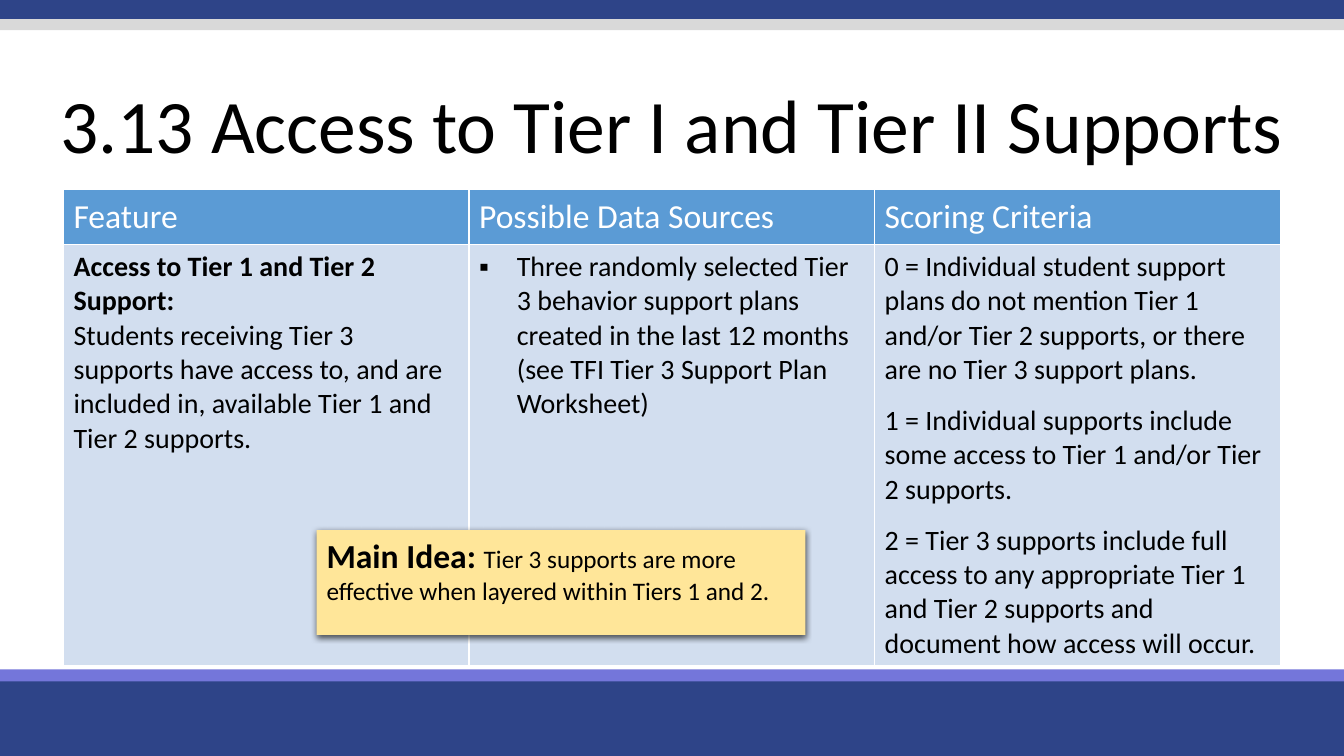
from dataclasses import dataclass

from lxml import etree
from pptx import Presentation
from pptx import util as u
from pptx.dml.color import RGBColor
from pptx.enum import shapes, text
from pptx.oxml import ns

Cm, Pt = u.Cm, u.Pt
WIDTH, HEIGHT = 33.87, 19.05


@dataclass(frozen=True)
class Theme:
    font: str = "Calibri"
    navy: str = "2E4488"
    violet: str = "7476DA"
    grey: str = "D9D9D9"
    header: str = "5B9BD5"
    body: str = "D2DEEF"
    note: str = "FFE699"
    black: str = "000000"
    white: str = "FFFFFF"
    title_size: int = 54
    head_size: int = 24
    body_size: int = 20
    note_size: int = 18


T = Theme()

HEADINGS = ["Feature", "Possible Data Sources", "Scoring Criteria"]
FEATURE = [
    "Access to Tier 1 and Tier 2 Support:",
    "Students receiving Tier 3 supports have access to, and are included in, "
    "available Tier 1 and Tier 2 supports.",
]
SOURCES = [
    "Three randomly selected Tier 3 behavior support plans created in the last "
    "12 months (see TFI Tier 3 Support Plan Worksheet)",
]
CRITERIA = [
    "0 = Individual student support plans do not mention Tier 1 and/or Tier 2 "
    "supports, or there are no Tier 3 support plans.",
    "1 = Individual supports include some access to Tier 1 and/or Tier 2 supports.",
    "2 = Tier 3 supports include full access to any appropriate Tier 1 and Tier 2 "
    "supports and document how access will occur.",
]


def sub(parent, tag, **attrs):
    return etree.SubElement(parent, ns.qn(tag), attrs)


def style(r, size, color=T.black, bold=False):
    r.font.name, r.font.size, r.font.bold = T.font, Pt(size), bold
    r.font.color.rgb = RGBColor.from_string(color)


def add_rect(s, box, color):
    sp = s.shapes.add_shape(shapes.MSO_SHAPE.RECTANGLE, *map(Cm, box))
    sp.shadow.inherit = False
    sp.fill.solid()
    sp.fill.fore_color.rgb = RGBColor.from_string(color)
    sp.line.fill.background()
    return sp


def add_bands(s):
    """Full-width stripes along the top and bottom edges."""
    for top, height, color in [
        (17.02, HEIGHT - 17.02, T.navy),
        (16.87, 0.3, T.violet),
        (0, 0.48, T.navy),
        (0.48, 0.28, T.grey),
    ]:
        add_rect(s, (0, top, WIDTH, height), color)


def add_title(s, box, title):
    sp = s.shapes.title
    sp.left, sp.top, sp.width, sp.height = map(Cm, box)
    tf = sp.text_frame
    tf.text = title
    tf.vertical_anchor = text.MSO_ANCHOR.MIDDLE
    tf.auto_size = text.MSO_AUTO_SIZE.NONE
    p = tf.paragraphs[0]
    p.alignment, p.line_spacing = text.PP_ALIGN.CENTER, 0.9
    style(p.runs[0], T.title_size)


def fill_cell(cell, paragraphs, fill, size, color):
    cell.fill.solid()
    cell.fill.fore_color.rgb = RGBColor.from_string(fill)
    tc_pr = cell._tc.get_or_add_tcPr()
    for i, side in enumerate("LRTB"):
        ln = etree.Element(ns.qn(f"a:ln{side}"), w=str(Pt(1)))
        sub(sub(ln, "a:solidFill"), "a:srgbClr", val=T.white)
        tc_pr.insert(i, ln)
    cell.text_frame.text = "\n".join(paragraphs)
    for p in cell.text_frame.paragraphs:
        style(p.runs[0], size, color)


def add_bullet(p, indent):
    p_pr = p._p.get_or_add_pPr()
    p_pr.set("marL", str(indent))
    p_pr.set("indent", str(-indent))
    sub(p_pr, "a:buFont", typeface="Arial")
    sub(p_pr, "a:buChar", char="▪")


def add_feature_table(s, box, head_height):
    left, top, width, height = box
    table = s.shapes.add_table(2, len(HEADINGS), *map(Cm, box)).table
    table.rows[0].height = Cm(head_height)
    table.rows[1].height = Cm(height - head_height)
    for i, (heading, body) in enumerate(zip(HEADINGS, [FEATURE, SOURCES, CRITERIA])):
        table.columns[i].width = Cm(width / len(HEADINGS))
        head = table.cell(0, i)
        fill_cell(head, [heading], T.header, T.head_size, T.white)
        head.vertical_anchor = text.MSO_ANCHOR.MIDDLE
        fill_cell(table.cell(1, i), body, T.body, T.body_size, T.black)

    feature, sources, criteria = (c.text_frame.paragraphs for c in table.rows[1].cells)
    feature[0].runs[0].font.bold = True
    add_bullet(sources[0], Cm(0.95))
    for p in criteria[:-1]:
        p.space_after = Pt(12)


def add_main_idea(s, box):
    sp = add_rect(s, box, T.note)
    effects = sp._element.spPr.find(ns.qn("a:effectLst"))
    shadow = sub(effects, "a:outerShdw", blurRad=str(Pt(4.5)), dist=str(Pt(1.5)),
                 dir="5400000", algn="ctr", rotWithShape="0")
    sub(sub(shadow, "a:srgbClr", val=T.black), "a:alpha", val="63000")
    tf = sp.text_frame
    tf.word_wrap = True
    tf.vertical_anchor = text.MSO_ANCHOR.TOP
    p = tf.paragraphs[0]
    p.alignment = text.PP_ALIGN.LEFT
    for words, size, bold in [
        ("Main Idea: ", T.head_size, True),
        ("Tier 3 supports are more effective when layered within Tiers 1 and 2.",
         T.note_size, False),
    ]:
        r = p.add_run()
        r.text = words
        style(r, size, bold=bold)


def main():
    prs = Presentation()
    prs.slide_width, prs.slide_height = Cm(WIDTH), Cm(HEIGHT)
    s = prs.slides.add_slide(prs.slide_layouts.get_by_name("Title Only"))
    add_bands(s)
    add_title(s, (0, 1.75, WIDTH, 3), "3.13 Access to Tier I and Tier II Supports")
    add_feature_table(s, (1.6, 4.78, 30.66, 11.95), 1.39)
    add_main_idea(s, (7.98, 13.36, 12.32, 2.64))
    prs.save("out.pptx")


if __name__ == "__main__":
    main()
